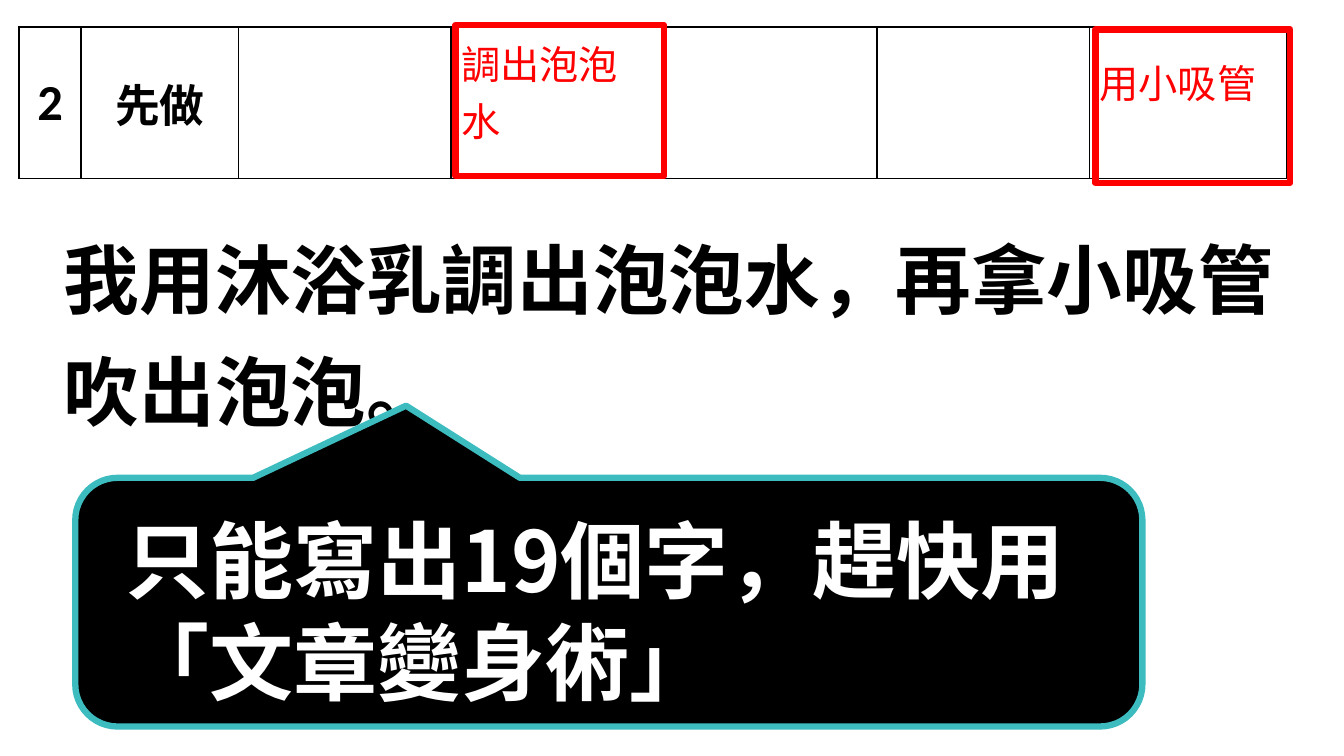
import pptx
import pptx.util
import pptx.dml.color
import pptx.enum.shapes
import pptx.enum.text
import pptx.oxml
import pptx.oxml.ns

WIDTH, HEIGHT = 13.33, 7.5
CJK = "Noto Sans CJK SC"
BLACK, WHITE, RED, TEAL = "000000", "FFFFFF", "FF0000", "3DBCC0"
COLUMNS = [0.62, 1.56, 2.11, 2.11, 2.11, 2.11, 1.96]
MIDDLE = pptx.enum.text.MSO_ANCHOR.MIDDLE
TOP = pptx.enum.text.MSO_ANCHOR.TOP
CENTER = pptx.enum.text.PP_ALIGN.CENTER
LEFT = pptx.enum.text.PP_ALIGN.LEFT
SHAPES = pptx.enum.shapes.MSO_SHAPE


def share(left, top, width, height):
    """Turn shares of the slide's size into lengths."""
    return [pptx.util.Inches(part * whole) for part, whole in
            zip((left, top, width, height), (WIDTH, HEIGHT) * 2)]


def color(target, value):
    """Give a font, fill or line color format its hex color."""
    target.rgb = pptx.dml.color.RGBColor.from_string(value)


def apply(target, formats):
    """Set every attribute in a dict of format values."""
    for name, value in formats.items():
        setattr(target, name, value)


def write(frame, lines, size, ink, bold=True, font=CJK, **layout):
    """Fill a text frame with one formatted paragraph for each line."""
    for index, line in enumerate(lines):
        para = frame.add_paragraph() if index else frame.paragraphs[0]
        apply(para, layout)
        span = para.add_run()
        span.text = line
        apply(span.font, {"size": pptx.util.Pt(size), "bold": bold, "name": font})
        color(span.font.color, ink)
        east = pptx.oxml.parse_xml(
            f'<a:ea {pptx.oxml.ns.nsdecls("a")} typeface="{font}"/>')
        span.font._element.find(pptx.oxml.ns.qn("a:latin")).addnext(east)


def add_outline(page, kind, place, line, fill=None):
    """Add a thickly outlined preset shape, filled or hollow."""
    shape = page.shapes.add_shape(kind, *share(*place))
    shape.shadow.inherit = False
    shape.line.width = pptx.util.Pt(4.5)
    color(shape.line.color, line)
    if fill:
        shape.fill.solid()
        color(shape.fill.fore_color, fill)
    else:
        shape.fill.background()
    return shape


def add_borders(cell):
    """Draw thin black lines on the four sides of a cell."""
    properties = cell._tc.get_or_add_tcPr()
    for index, side in enumerate(("lnL", "lnR", "lnT", "lnB")):
        properties.insert(index, pptx.oxml.parse_xml(
            f'<a:{side} {pptx.oxml.ns.nsdecls("a")} w="19050"><a:solidFill>'
            f'<a:srgbClr val="{BLACK}"/></a:solidFill></a:{side}>'))


def add_plan(page, entries):
    """Add the one-row plan table with its entries by column."""
    place = share(0.014, 0.036, 0.944, 0.2)
    table = page.shapes.add_table(1, len(COLUMNS), *place).table
    apply(table, {"first_row": False, "horz_banding": False})
    for index, width in enumerate(COLUMNS):
        table.columns[index].width = pptx.util.Inches(width)
        cell = table.cell(0, index)
        cell.vertical_anchor = MIDDLE
        cell.fill.solid()
        color(cell.fill.fore_color, WHITE)
        add_borders(cell)
        if index in entries:
            text, bottom, formats = entries[index]
            cell.margin_bottom = pptx.util.Inches(bottom)
            write(cell.text_frame, [text], **formats)


def add_sentence(page, text):
    """Place the sentence in the title placeholder."""
    box = page.shapes.title
    apply(box, dict(zip(("left", "top", "width", "height"),
                        share(0.04, 0.273, 0.938, 0.299))))
    apply(box.text_frame, {"word_wrap": True, "vertical_anchor": TOP,
                           "auto_size": pptx.enum.text.MSO_AUTO_SIZE.NONE})
    write(box.text_frame, [text], 54, BLACK, alignment=LEFT,
          line_spacing=pptx.util.Pt(80))


def add_callout(page, lines):
    """Add the speech callout and the lines upon it."""
    callout = add_outline(page, SHAPES.ROUNDED_RECTANGULAR_CALLOUT,
                          (0.056, 0.632, 0.794, 0.329), TEAL, BLACK)
    for index, value in enumerate((-0.19, -0.79, 0.17)):
        callout.adjustments[index] = value
    box = page.shapes.add_textbox(*share(0.086, 0.664, 0.747, 0.283))
    box.text_frame.word_wrap = True
    write(box.text_frame, lines, 60, WHITE, line_spacing=pptx.util.Pt(73))


def main():
    """Build the slide and save it."""
    deck = pptx.Presentation()
    apply(deck, {"slide_width": pptx.util.Inches(WIDTH),
                 "slide_height": pptx.util.Inches(HEIGHT)})
    page = deck.slides.add_slide(deck.slide_layouts.get_by_name("Title Only"))
    add_sentence(page, "我用沐浴乳調出泡泡水，再拿小吸管吹出泡泡。")
    add_callout(page, ["只能寫出19個字，趕快用", "「文章變身術」"])
    heading = {"ink": BLACK, "alignment": CENTER}
    answer = {"size": 28, "ink": RED, "bold": False}
    add_plan(page, {0: ("2", 0.05, {**heading, "size": 36, "font": "Calibri"}),
                    1: ("先做", 0.05, {**heading, "size": 32}),
                    3: ("調出泡泡水", 0.29, answer),
                    6: ("用小吸管", 0.47, answer)})
    for place in ((0.339, 0.033, 0.155, 0.2), (0.815, 0.039, 0.145, 0.203)):
        add_outline(page, SHAPES.RECTANGLE, place, RED)
    deck.save("out.pptx")


if __name__ == "__main__":
    main()
